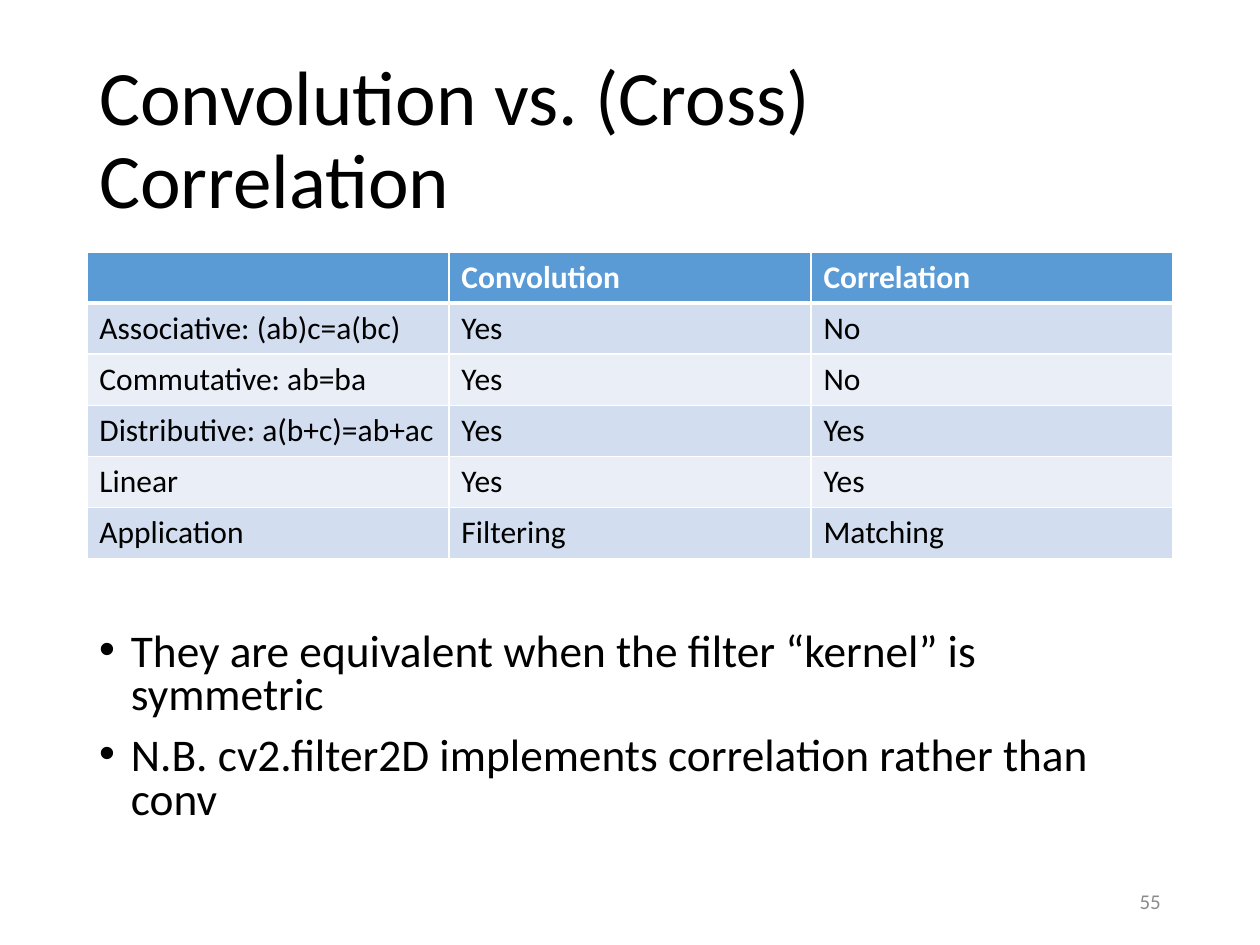
from dataclasses import dataclass

from lxml.etree import SubElement
from pptx import Presentation
from pptx.dml.color import RGBColor
from pptx.enum.text import MSO_ANCHOR, PP_ALIGN
from pptx.oxml.ns import qn
from pptx.util import Cm, Pt


@dataclass(frozen=True)
class Theme:
    """Colours and type sizes of the slide."""
    font: str = "Calibri"
    ink: str = "000000"
    white: str = "FFFFFF"
    muted: str = "8C8C8C"
    header: str = "5B9BD5"
    bands: tuple = ("D2DEEF", "EAEFF7")
    title_size: float = 44
    bullet_size: float = 25.9
    table_size: float = 18
    number_size: float = 12
    thin: float = 1
    thick: float = 3


THEME = Theme()
LEFT, WIDTH = 1.75, 21.9
ROW_HEIGHT = 1.03
ROWS = [
    ("", "Convolution", "Correlation"),
    ("Associative: (ab)c=a(bc)", "Yes", "No"),
    ("Commutative: ab=ba", "Yes", "No"),
    ("Distributive: a(b+c)=ab+ac", "Yes", "Yes"),
    ("Linear", "Yes", "Yes"),
    ("Application", "Filtering", "Matching"),
]
BULLETS = [
    "They are equivalent when the filter “kernel” is symmetric",
    "N.B. cv2.filter2D implements correlation rather than conv",
]


def write(para, text, size, color=THEME.ink, bold=False, align=PP_ALIGN.LEFT,
          line_spacing=None, space_before=0, bullet=False):
    """Write formatted text into a paragraph."""
    para.alignment = align
    para.line_spacing = line_spacing
    para.space_before = Pt(space_before)
    if bullet:
        properties = para._p.get_or_add_pPr()
        properties.set("marL", str(Cm(0.64)))
        properties.set("indent", str(-Cm(0.64)))
        SubElement(properties, qn("a:buFont"), typeface="Arial")
        SubElement(properties, qn("a:buChar"), char="•")
    span = para.add_run()
    span.text = text
    span.font.name = THEME.font
    span.font.size = Pt(size)
    span.font.bold = bold
    span.font.color.rgb = RGBColor.from_string(color)


def add_text(page, left, top, width, height, lines, size,
             anchor=MSO_ANCHOR.MIDDLE, **style):
    """Add a wrapping text box with one paragraph per line."""
    box = page.shapes.add_textbox(Cm(left), Cm(top), Cm(width), Cm(height))
    frame = box.text_frame
    frame.word_wrap = True
    frame.vertical_anchor = anchor
    for index, line in enumerate(lines):
        para = frame.add_paragraph() if index else frame.paragraphs[0]
        write(para, line, size, **style)


def add_borders(cell, top, bottom):
    """Draw white borders around a table cell."""
    properties = cell._tc.get_or_add_tcPr()
    widths = {"a:lnL": THEME.thin, "a:lnR": THEME.thin, "a:lnT": top, "a:lnB": bottom}
    for side, width in widths.items():
        line = SubElement(properties, qn(side), w=str(Pt(width)))
        fill = SubElement(line, qn("a:solidFill"))
        SubElement(fill, qn("a:srgbClr"), val=THEME.white)


def add_comparison(page, top):
    """Add the banded comparison table."""
    columns = len(ROWS[0])
    table = page.shapes.add_table(len(ROWS), columns, Cm(LEFT), Cm(top),
                                  Cm(WIDTH), Cm(ROW_HEIGHT * len(ROWS))).table
    for row_index, texts in enumerate(ROWS):
        table.rows[row_index].height = Cm(ROW_HEIGHT)
        is_header = row_index == 0
        fill = THEME.header if is_header else THEME.bands[(row_index - 1) % 2]
        for column_index, text in enumerate(texts):
            cell = table.cell(row_index, column_index)
            add_borders(cell, THEME.thick if row_index == 1 else THEME.thin,
                        THEME.thick if is_header else THEME.thin)
            cell.fill.solid()
            cell.fill.fore_color.rgb = RGBColor.from_string(fill)
            if text:
                write(cell.text_frame.paragraphs[0], text, THEME.table_size,
                      color=THEME.white if is_header else THEME.ink, bold=is_header)


def main():
    """Build and save the slide."""
    deck = Presentation()
    deck.slide_width, deck.slide_height = Cm(25.4), Cm(19.05)
    page = deck.slides.add_slide(deck.slide_layouts[6])
    add_text(page, LEFT, 1.02, WIDTH, 3.68, ["Convolution vs. (Cross) Correlation"],
             THEME.title_size, line_spacing=0.9)
    add_text(page, 17.93, 17.65, 5.72, 1.02, ["55"], THEME.number_size,
             color=THEME.muted, align=PP_ALIGN.RIGHT)
    add_comparison(page, 5.08)
    add_text(page, LEFT, 12.62, WIDTH, 4.55, BULLETS, THEME.bullet_size,
             anchor=MSO_ANCHOR.TOP, line_spacing=0.8, space_before=10, bullet=True)
    deck.save("out.pptx")


if __name__ == "__main__":
    main()
